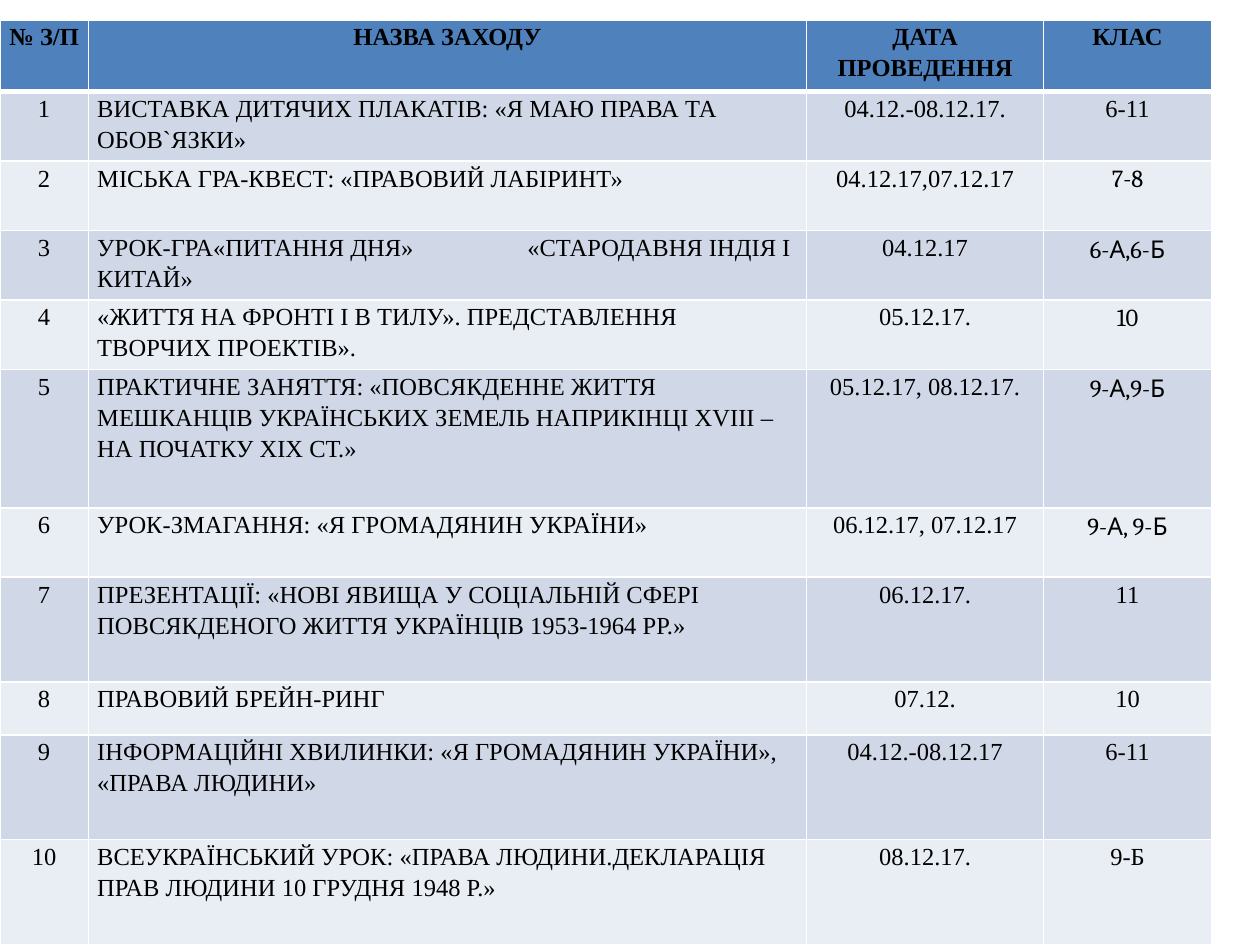
from itertools import groupby

from lxml.etree import SubElement
from pptx import Presentation
from pptx.dml.color import RGBColor as RGB
from pptx.enum.text import PP_ALIGN as Align
from pptx.oxml.ns import qn
from pptx.util import Cm, Pt

COLORS = {"header": "4F81BD", "odd": "D0D8E8", "even": "E9EDF4",
          "border": "FFFFFF", "text": "000000"}
MAIN_FONT, DIGIT_FONT, LETTER_FONT = "Times New Roman", "Cambria", "Cabin"

HEADERS = ["№ З/П", "НАЗВА ЗАХОДУ", "ДАТА ПРОВЕДЕННЯ", "КЛАС"]
EVENTS = [
    ("ВИСТАВКА ДИТЯЧИХ ПЛАКАТІВ: «Я МАЮ ПРАВА ТА ОБОВ`ЯЗКИ»", "04.12.-08.12.17.", "6-11"),
    ("МІСЬКА ГРА-КВЕСТ: «ПРАВОВИЙ ЛАБІРИНТ»", "04.12.17,07.12.17", "7-8"),
    ("УРОК-ГРА«ПИТАННЯ ДНЯ»\t«СТАРОДАВНЯ ІНДІЯ І КИТАЙ»", "04.12.17", "6-А,6-Б"),
    ("«ЖИТТЯ НА ФРОНТІ І В ТИЛУ». ПРЕДСТАВЛЕННЯ ТВОРЧИХ ПРОЕКТІВ».", "05.12.17.", "10"),
    ("ПРАКТИЧНЕ ЗАНЯТТЯ: «ПОВСЯКДЕННЕ ЖИТТЯ МЕШКАНЦІВ УКРАЇНСЬКИХ ЗЕМЕЛЬ "
     "НАПРИКІНЦІ ХVІІІ – НА ПОЧАТКУ ХІХ СТ.»", "05.12.17, 08.12.17.", "9-А,9-Б"),
    ("УРОК-ЗМАГАННЯ: «Я ГРОМАДЯНИН УКРАЇНИ»", "06.12.17, 07.12.17", "9-А, 9-Б"),
    ("ПРЕЗЕНТАЦІЇ: «НОВІ ЯВИЩА У СОЦІАЛЬНІЙ СФЕРІ ПОВСЯКДЕНОГО ЖИТТЯ "
     "УКРАЇНЦІВ 1953-1964 РР.»", "06.12.17.", "11"),
    ("ПРАВОВИЙ БРЕЙН-РИНГ", "07.12.", "10"),
    ("ІНФОРМАЦІЙНІ ХВИЛИНКИ: «Я ГРОМАДЯНИН УКРАЇНИ», «ПРАВА ЛЮДИНИ»",
     "04.12.-08.12.17", "6-11"),
    ("ВСЕУКРАЇНСЬКИЙ УРОК: «ПРАВА ЛЮДИНИ.ДЕКЛАРАЦІЯ ПРАВ ЛЮДИНИ 10 ГРУДНЯ 1948 Р.»",
     "08.12.17.", "9-Б"),
]
NAME_COL, CLASS_COL = 1, 3
CAMBRIA_ROWS = range(2, 7)
COL_WIDTHS = [1.78, 14.48, 4.78, 3.38]
ROW_HEIGHTS = [1.45, 1.4, 1.4, 1.4, 1.4, 2.79, 1.4, 2.11, 1.07, 2.11, 2.11]
TAB_STOP = 8.67


def add_border(cell, side, width):
    ln = SubElement(cell._tc.get_or_add_tcPr(), qn(f"a:ln{side}"), w=str(Pt(width)))
    fill = SubElement(ln, qn("a:solidFill"))
    SubElement(fill, qn("a:srgbClr"), val=COLORS["border"])


def write(cell, text, align=Align.CENTER, bold=False, mixed_fonts=False):
    """Fill the cell; mixed_fonts sets letters and digits in different fonts."""
    p = cell.text_frame.paragraphs[0]
    p.alignment, p.line_spacing = align, 1.15
    if "\t" in text:
        tabs = SubElement(p._p.get_or_add_pPr(), qn("a:tabLst"))
        SubElement(tabs, qn("a:tab"), pos=str(Cm(TAB_STOP)), algn="l")
    if mixed_fonts:
        parts = [("".join(chars), LETTER_FONT if alpha else DIGIT_FONT)
                 for alpha, chars in groupby(text, str.isalpha)]
    else:
        parts = [(text, MAIN_FONT)]
    for part, font in parts:
        r = p.add_run()
        r.text = part
        r.font.name, r.font.size, r.font.bold = font, Pt(14), bold
        r.font.color.rgb = RGB.from_string(COLORS["text"])


def style_cell(cell, color, bottom):
    cell.margin_left = cell.margin_right = Cm(0.18)
    cell.margin_top = cell.margin_bottom = 0
    for side, width in zip("LRTB", (1, 1, 1, bottom)):
        add_border(cell, side, width)
    cell.fill.solid()
    cell.fill.fore_color.rgb = RGB.from_string(COLORS[color])


def main():
    prs = Presentation()
    prs.slide_width, prs.slide_height = Cm(25.4), Cm(19.05)
    s = prs.slides.add_slide(prs.slide_layouts[6])

    rows = [HEADERS] + [(str(n), *event) for n, event in enumerate(EVENTS, 1)]
    table = s.shapes.add_table(len(rows), len(HEADERS), 0, Cm(0.4),
                               Cm(sum(COL_WIDTHS)), Cm(sum(ROW_HEIGHTS))).table
    for column, width in zip(table.columns, COL_WIDTHS):
        column.width = Cm(width)
    for row, height in zip(table.rows, ROW_HEIGHTS):
        row.height = Cm(height)

    for i, texts in enumerate(rows):
        header = i == 0
        color = "header" if header else "odd" if i % 2 else "even"
        for j, text in enumerate(texts):
            cell = table.cell(i, j)
            style_cell(cell, color, bottom=3 if header else 1)
            left = j == NAME_COL and not header
            write(cell, text, align=Align.LEFT if left else Align.CENTER, bold=header,
                  mixed_fonts=j == CLASS_COL and i in CAMBRIA_ROWS)
    prs.save("out.pptx")


if __name__ == "__main__":
    main()
